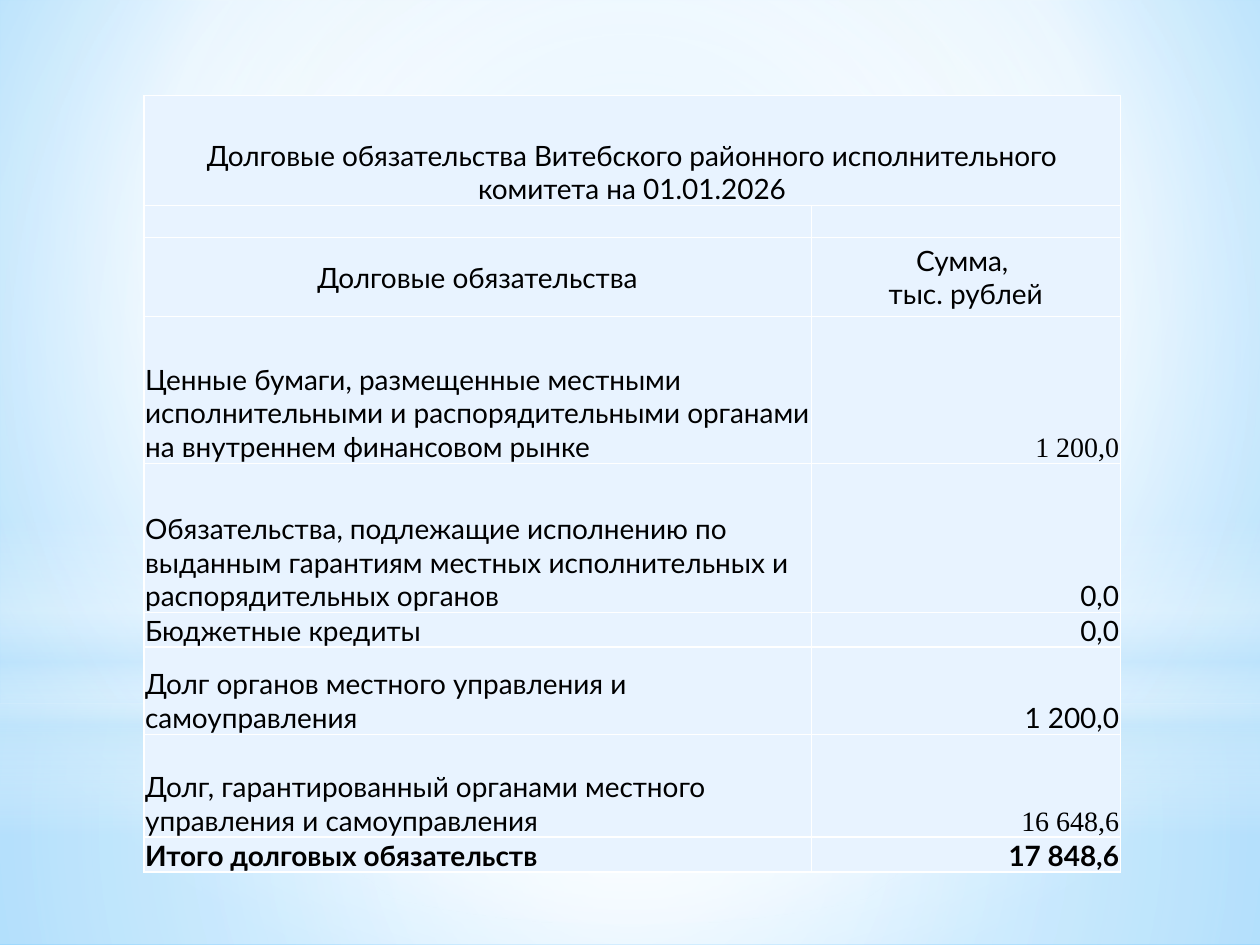
import pptx
import pptx.dml.color
import pptx.enum.shapes
import pptx.enum.text
import pptx.oxml
import pptx.oxml.ns
import pptx.util
from lxml import etree

Pt = pptx.util.Pt
qn = pptx.oxml.ns.qn
RGB = pptx.dml.color.RGBColor.from_string
SHAPE = pptx.enum.shapes.MSO_SHAPE
ALIGN = pptx.enum.text.PP_ALIGN
ANCHOR = pptx.enum.text.MSO_ANCHOR

COLORS = {"sky": "B0E0FF", "blue": "6BC5FF", "pale": "C6E7FC",
          "white": "FFFFFF", "cell": "E8F3FF", "text": "000000"}
CENTER = (50, 50, 50, 50)


def set_gradient(parent, stops, focus=None):
    """Replace the solid fill in parent: circular around focus, else top to bottom.

    Stops are (position %, colour name, opacity %).
    """
    grad = etree.Element(qn("a:gradFill"), rotWithShape="1")
    stop_list = etree.SubElement(grad, qn("a:gsLst"))
    for pos, color, opacity in stops:
        gs = etree.SubElement(stop_list, qn("a:gs"), pos=str(pos * 1000))
        clr = etree.SubElement(gs, qn("a:srgbClr"), val=COLORS[color])
        if opacity < 100:
            etree.SubElement(clr, qn("a:alpha"), val=str(opacity * 1000))
    if focus:
        circle = etree.SubElement(grad, qn("a:path"), {"path": "circle"})
        sides = {k: str(v * 1000) for k, v in zip("ltrb", focus)}
        etree.SubElement(circle, qn("a:fillToRect"), sides)
    else:
        etree.SubElement(grad, qn("a:lin"), ang="5400000", scaled="0")
    parent.replace(parent.find(qn("a:solidFill")), grad)


def style_cell(cell):
    """Give a cell its white borders, fill and narrow margins."""
    tc_pr = cell._tc.get_or_add_tcPr()
    for side in ("lnL", "lnR", "lnT", "lnB"):
        ln = etree.SubElement(tc_pr, qn("a:" + side), w=str(Pt(1)))
        line_fill = etree.SubElement(ln, qn("a:solidFill"))
        etree.SubElement(line_fill, qn("a:srgbClr"), val=COLORS["white"])
    cell.fill.solid()
    cell.fill.fore_color.rgb = RGB(COLORS["cell"])
    cell.margin_left = cell.margin_right = cell.margin_top = Pt(0.75)
    cell.margin_bottom = Pt(0)


prs = pptx.Presentation()
prs.slide_width, prs.slide_height = Pt(720), Pt(540)
s = prs.slides.add_slide(prs.slide_layouts[6])

# Background and its soft light layers
s.background.fill.solid()
set_gradient(s._element.cSld.bg.bgPr,
             [(0, "sky", 100), (60, "white", 100), (100, "blue", 100)],
             (20, 10, 20, 60))

layers = [
    (SHAPE.RECTANGLE, 402, 138, CENTER,
     [(0, "white", 91), (37, "white", 76), (100, "pale", 79)]),
    (SHAPE.RECTANGLE, 0, 402, CENTER,
     [(0, "white", 89), (48, "white", 62), (100, "pale", 79)]),
    (SHAPE.RECTANGLE, 297, 180, None,
     [(0, "white", 0), (29, "white", 30), (45, "pale", 40),
      (55, "white", 26), (65, "pale", 60), (100, "white", 0)]),
    (SHAPE.OVAL, 126, 402, CENTER, [(0, "white", 100), (56, "white", 0)]),
]
for kind, top, height, focus, stops in layers:
    sp = s.shapes.add_shape(kind, Pt(0), Pt(top), Pt(720), Pt(height))
    sp.shadow.inherit = False
    sp.line.fill.background()
    sp.fill.solid()
    set_gradient(sp._element.spPr, stops, focus)

# Debt table: row height, label, amount
rows = [
    (62.8, "Долговые обязательства Витебского районного исполнительного "
           "комитета на 01.01.2026", ""),
    (18.2, "", ""),
    (45.2, "Долговые обязательства", "Сумма, \nтыс. рублей"),
    (84, "Ценные бумаги, размещенные местными исполнительными и "
         "распорядительными органами на внутреннем финансовом рынке", "1 200,0"),
    (85.2, "Обязательства, подлежащие исполнению по выданным гарантиям "
           "местных исполнительных и распорядительных органов", "0,0"),
    (19.4, "Бюджетные кредиты", "0,0"),
    (49.8, "Долг органов местного управления и самоуправления", "1 200,0"),
    (58.8, "Долг, гарантированный органами местного управления и "
           "самоуправления", "16 648,6"),
    (19.4, "Итого долговых обязательств", "17 848,6"),
]
TITLE, HEADER, TOTAL = 0, 2, len(rows) - 1
SERIF_AMOUNTS = (3, 7)
widths = (381.4, 176.6)

table = s.shapes.add_table(len(rows), 2, Pt(82.2), Pt(54.6), Pt(sum(widths)),
                           Pt(sum(row[0] for row in rows))).table
for col, width in zip(table.columns, widths):
    col.width = Pt(width)

for i, (height, *texts) in enumerate(rows):
    table.rows[i].height = Pt(height)
    for j, text in enumerate(texts):
        cell = table.cell(i, j)
        style_cell(cell)
        cell.vertical_anchor = ANCHOR.MIDDLE if i == HEADER else ANCHOR.BOTTOM
        p = cell.text_frame.paragraphs[0]
        if not text:
            etree.SubElement(p._p, qn("a:endParaRPr"), sz="1200")
            continue
        if i in (TITLE, HEADER):
            p.alignment = ALIGN.CENTER
        else:
            p.alignment = ALIGN.RIGHT if j else ALIGN.LEFT
        for n, line in enumerate(text.split("\n")):
            if n:
                p.add_line_break()
            r = p.add_run()
            r.text = line
            r.font.name = "Times New Roman" if j and i in SERIF_AMOUNTS else "Lato"
            r.font.size = Pt(16)
            r.font.bold = i == TOTAL
            r.font.color.rgb = RGB(COLORS["text"])

table.cell(TITLE, 0).merge(table.cell(TITLE, 1))

prs.save("out.pptx")
